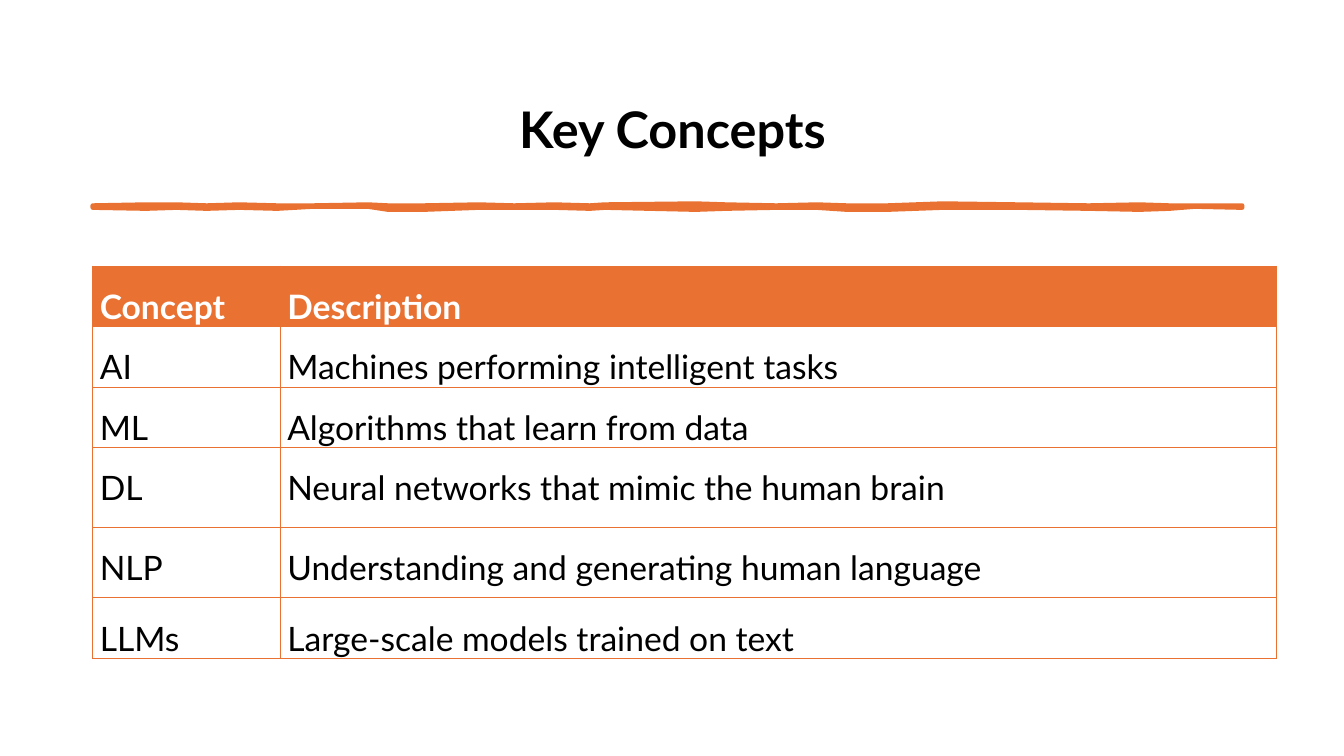
from lxml.etree import SubElement
from pptx import Presentation
from pptx.dml.color import RGBColor as RGB
from pptx.enum.text import MSO_ANCHOR as ANCHOR, PP_ALIGN as ALIGN
from pptx.oxml.ns import qn
from pptx.util import Inches, Pt

TITLE = "Key Concepts"
ROWS = [
    ("Concept", "Description"),
    ("AI", "Machines performing intelligent tasks"),
    ("ML", "Algorithms that learn from data"),
    ("DL", "Neural networks that mimic the human brain"),
    ("NLP", "Understanding and generating human language"),
    ("LLMs", "Large-scale models trained on text"),
]
COL_WIDTHS = [1.86, 9.88]
ROW_HEIGHTS = [0.53, 0.53, 0.53, 0.79, 0.7, 0.53]
COLORS = {"accent": "E97132", "text": "000000", "header": "FFFFFF"}
FONT = "Lato"
LEFT = 0.92
BRUSH = [
    (0.92, 2.04, 2.06), (1.45, 2.03, 2.07), (1.75, 2.03, 2.06),
    (2.05, 2.04, 2.07), (2.37, 2.03, 2.06), (2.75, 2.04, 2.07),
    (3.1, 2.04, 2.05), (3.65, 2.03, 2.05), (3.85, 2.04, 2.08),
    (4.2, 2.04, 2.08), (4.75, 2.03, 2.06), (5.1, 2.04, 2.06),
    (5.5, 2.03, 2.06), (5.85, 2.04, 2.07), (6.0, 2.03, 2.06),
    (6.9, 2.02, 2.08), (7.2, 2.03, 2.07), (7.7, 2.04, 2.06),
    (8.1, 2.03, 2.06), (8.4, 2.04, 2.08), (8.8, 2.04, 2.08),
    (9.35, 2.02, 2.06), (10.1, 2.03, 2.06), (10.8, 2.04, 2.07),
    (11.3, 2.03, 2.08), (11.6, 2.04, 2.07), (11.85, 2.04, 2.05),
    (12.32, 2.04, 2.06),
]


def write(tf, text, color, para, font):
    p = tf.paragraphs[0]
    for name, value in para.items():
        setattr(p, name, value)
    r = p.add_run()
    r.text = text
    for name, value in font.items():
        setattr(r.font, name, value)
    r.font.color.rgb = RGB.from_string(COLORS[color])


def add_borders(cell):
    tcPr = cell._tc.get_or_add_tcPr()
    for i, side in enumerate(("lnL", "lnR", "lnT", "lnB")):
        ln = SubElement(tcPr, qn(f"a:{side}"), w=str(Pt(1)))
        fill = SubElement(ln, qn("a:solidFill"))
        SubElement(fill, qn("a:srgbClr"), val=COLORS["accent"])
        tcPr.insert(i, ln)


def add_title(s):
    box = s.shapes.add_textbox(Inches(LEFT), Inches(0.4), Inches(11.5), Inches(1.45))
    tf = box.text_frame
    tf.word_wrap = True
    tf.vertical_anchor = ANCHOR.MIDDLE
    para = {"alignment": ALIGN.CENTER, "line_spacing": 1.5,
            "space_before": Pt(8), "space_after": Pt(4)}
    write(tf, TITLE, "text", para, {"name": FONT, "size": Pt(36), "bold": True})


def add_brush_line(s):
    top = [(Inches(x), Inches(y)) for x, y, _ in BRUSH]
    bottom = [(Inches(x), Inches(y)) for x, _, y in reversed(BRUSH)]
    builder = s.shapes.build_freeform(*top[0])
    builder.add_line_segments(top[1:] + bottom, close=True)
    sp = builder.convert_to_shape()
    sp.shadow.inherit = False
    for fill in (sp.fill, sp.line.fill):
        fill.solid()
        fill.fore_color.rgb = RGB.from_string(COLORS["accent"])
    sp.line.width = Pt(3.25)


def add_concepts(s):
    frame = s.shapes.add_table(len(ROWS), len(COL_WIDTHS), Inches(LEFT), Inches(2.64),
                               Inches(sum(COL_WIDTHS)), Inches(sum(ROW_HEIGHTS)))
    table = frame.table
    table.horz_banding = False
    for col, width in zip(table.columns, COL_WIDTHS):
        col.width = Inches(width)
    margins = {"margin_left": Inches(0.07), "margin_right": Inches(0.07),
               "margin_top": 0, "margin_bottom": 0}
    para = {"alignment": ALIGN.JUSTIFY, "line_spacing": 1.5,
            "space_before": Pt(1.8), "space_after": Pt(1.8)}
    for i, texts in enumerate(ROWS):
        table.rows[i].height = Inches(ROW_HEIGHTS[i])
        header = i == 0
        for j, text in enumerate(texts):
            cell = table.cell(i, j)
            for name, value in margins.items():
                setattr(cell, name, value)
            add_borders(cell)
            if header:
                cell.fill.solid()
                cell.fill.fore_color.rgb = RGB.from_string(COLORS["accent"])
            else:
                cell.fill.background()
            write(cell.text_frame, text, "header" if header else "text", para,
                  {"name": FONT, "size": Pt(24), "bold": header})


def main():
    prs = Presentation()
    prs.slide_width, prs.slide_height = Inches(13.33), Inches(7.5)
    s = prs.slides.add_slide(prs.slide_layouts[6])
    add_title(s)
    add_brush_line(s)
    add_concepts(s)
    prs.save("out.pptx")


if __name__ == "__main__":
    main()
